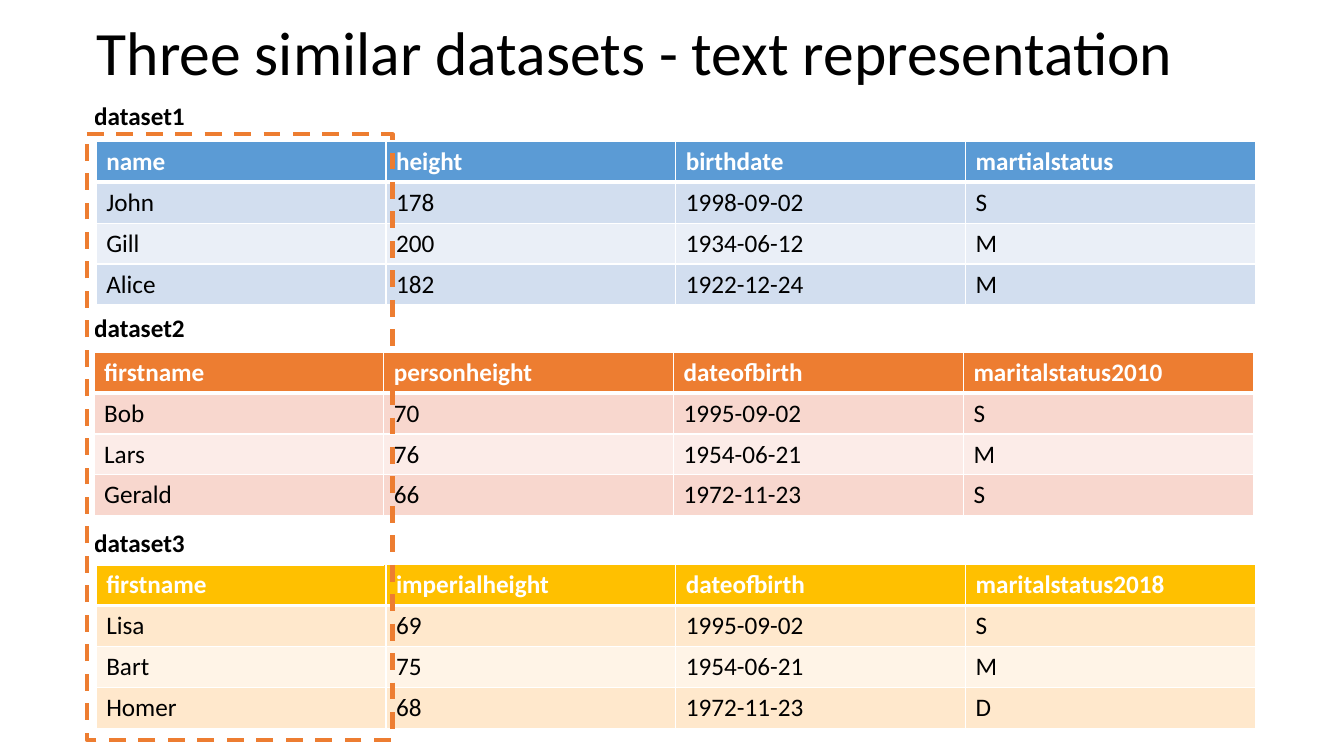
"""Build a slide that shows three similar datasets as tables."""
from lxml.etree import SubElement
from pptx import Presentation
from pptx.dml.color import RGBColor
from pptx.enum.dml import MSO_LINE
from pptx.enum.shapes import MSO_SHAPE
from pptx.enum.text import MSO_ANCHOR, PP_ALIGN
from pptx.oxml.ns import qn
from pptx.util import Pt

TITLE = "Three similar datasets - text representation"
DATASETS = [
    {
        "label": "dataset1", "label_top": 69.1, "left": 68.7, "top": 101,
        "colors": ("5B9BD5", "D2DEEF", "EAEFF7"),
        "rows": [
            ("name", "height", "birthdate", "martialstatus"),
            ("John", "178", "1998-09-02", "S"),
            ("Gill", "200", "1934-06-12", "M"),
            ("Alice", "182", "1922-12-24", "M"),
        ],
    },
    {
        "label": "dataset2", "label_top": 220.1, "left": 67.2, "top": 251.6,
        "colors": ("ED7D31", "F8D7CE", "FCECE8"),
        "rows": [
            ("firstname", "personheight", "dateofbirth", "maritalstatus2010"),
            ("Bob", "70", "1995-09-02", "S"),
            ("Lars", "76", "1954-06-21", "M"),
            ("Gerald", "66", "1972-11-23", "S"),
        ],
    },
    {
        "label": "dataset3", "label_top": 373.7, "left": 68.7, "top": 403.4,
        "colors": ("FFC000", "FFE8CC", "FFF4E7"),
        "rows": [
            ("firstname", "imperialheight", "dateofbirth", "maritalstatus2018"),
            ("Lisa", "69", "1995-09-02", "S"),
            ("Bart", "75", "1954-06-21", "M"),
            ("Homer", "68", "1972-11-23", "D"),
        ],
    },
]
LABEL_LEFT = 67.2
COLUMN_WIDTH = 207
ROW_HEIGHT = 29.2
THIN, THICK = 1, 3


def color(value):
    return RGBColor.from_string(value)


def write_text(frame, text, size=18, font_color="000000", bold=False):
    paragraph = frame.paragraphs[0]
    paragraph.alignment = PP_ALIGN.LEFT
    run = paragraph.add_run()
    run.text = text
    run.font.name = "Calibri"
    run.font.size = Pt(size)
    run.font.bold = bold
    run.font.color.rgb = color(font_color)
    return paragraph


def set_borders(cell, top, bottom):
    properties = cell._tc.get_or_add_tcPr()
    widths = {"a:lnL": THIN, "a:lnR": THIN, "a:lnT": top, "a:lnB": bottom}
    for position, (tag, width) in enumerate(widths.items()):
        line = SubElement(properties, qn(tag), w=str(Pt(width)))
        fill = SubElement(line, qn("a:solidFill"))
        SubElement(fill, qn("a:srgbClr"), val="FFFFFF")
        properties.insert(position, line)


def add_grid(slide, rows, left, top):
    columns = len(rows[0])
    table = slide.shapes.add_table(
        len(rows), columns, Pt(left), Pt(top),
        Pt(COLUMN_WIDTH * columns), Pt(ROW_HEIGHT * len(rows)),
    ).table
    table.first_row = False
    table.horz_banding = False
    for column in table.columns:
        column.width = Pt(COLUMN_WIDTH)
    for row in table.rows:
        row.height = Pt(ROW_HEIGHT)
    return table


def add_dataset(slide, dataset):
    header_fill, *band_fills = dataset["colors"]
    table = add_grid(slide, dataset["rows"], dataset["left"], dataset["top"])
    for row_index, values in enumerate(dataset["rows"]):
        header = row_index == 0
        fill = header_fill if header else band_fills[(row_index - 1) % 2]
        for column_index, value in enumerate(values):
            cell = table.cell(row_index, column_index)
            cell.fill.solid()
            cell.fill.fore_color.rgb = color(fill)
            set_borders(cell, THICK if row_index == 1 else THIN, THICK if header else THIN)
            write_text(cell.text_frame, value, bold=header,
                       font_color="FFFFFF" if header else "000000")


def add_label(slide, dataset):
    cell = add_grid(slide, [(dataset["label"],)], LABEL_LEFT, dataset["label_top"]).cell(0, 0)
    cell.fill.background()
    cell.margin_left = 0
    set_borders(cell, THIN, THICK)
    write_text(cell.text_frame, dataset["label"], bold=True)


def add_title(slide):
    title = slide.shapes.title
    title.left, title.top, title.width, title.height = Pt(61.9), Pt(-12.2), Pt(828), Pt(104.4)
    title.text_frame.vertical_anchor = MSO_ANCHOR.MIDDLE
    title.text_frame.word_wrap = True
    write_text(title.text_frame, TITLE, size=44).line_spacing = 0.9


def add_name_column_frame(slide):
    frame = slide.shapes.add_shape(
        MSO_SHAPE.ROUNDED_RECTANGLE, Pt(62.1), Pt(95.8), Pt(218.2), Pt(432.7))
    frame.adjustments[0] = 0
    frame.shadow.inherit = False
    frame.fill.background()
    frame.line.color.rgb = color("ED7D31")
    frame.line.width = Pt(3)
    frame.line.dash_style = MSO_LINE.DASH


def main():
    presentation = Presentation()
    presentation.slide_width, presentation.slide_height = Pt(960), Pt(540)
    slide = presentation.slides.add_slide(presentation.slide_layouts[5])
    add_title(slide)
    for dataset in DATASETS:
        add_dataset(slide, dataset)
        add_label(slide, dataset)
    add_name_column_frame(slide)
    presentation.save("out.pptx")


if __name__ == "__main__":
    main()
